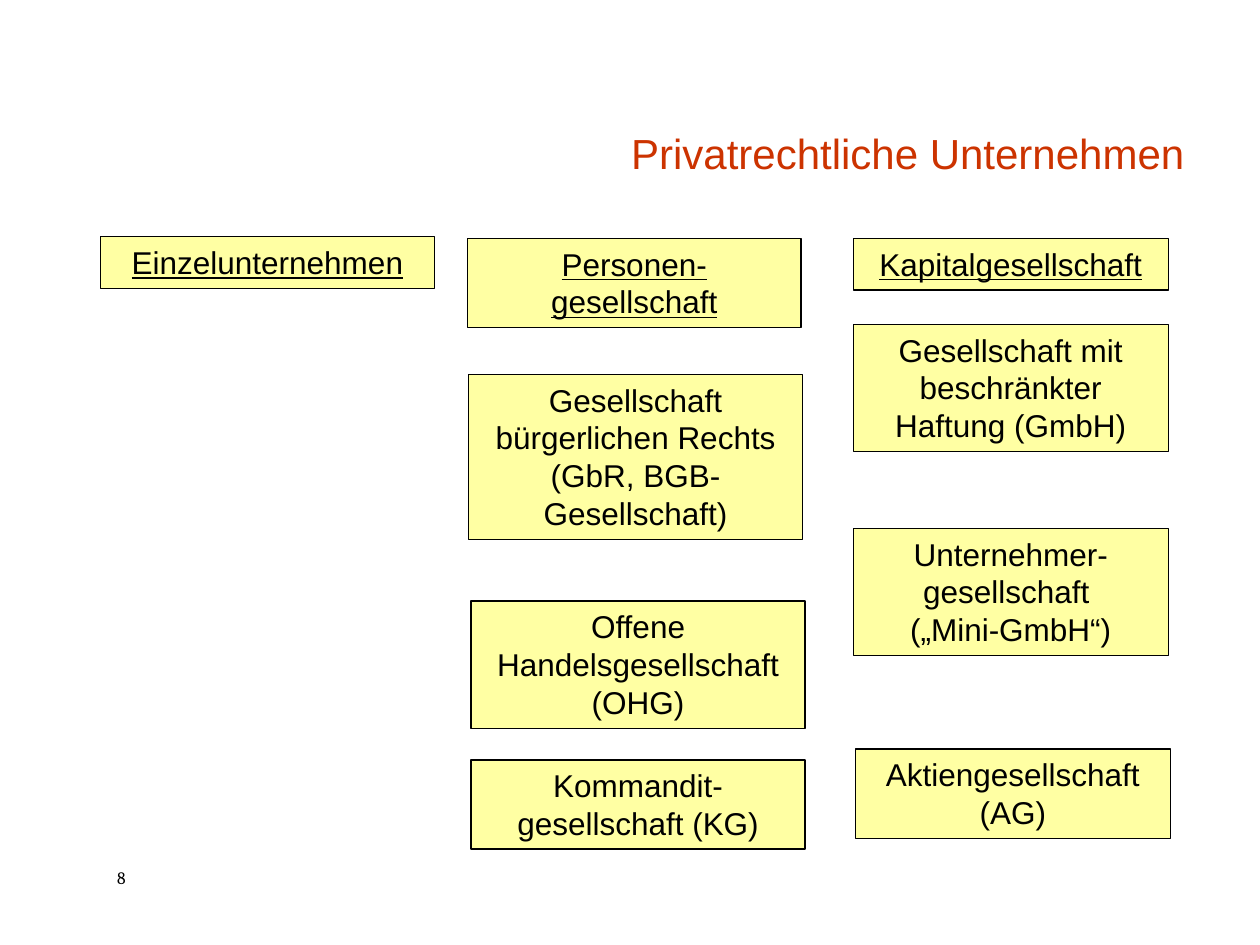
"""Build the slide on the forms of enterprise under private law."""
from pptx import Presentation
from pptx.dml.color import RGBColor
from pptx.enum.shapes import MSO_SHAPE as Shape
from pptx.enum.text import MSO_ANCHOR as Anchor, MSO_AUTO_SIZE as AutoSize, PP_ALIGN as Align
from pptx.util import Pt


def color(value):
    return RGBColor.from_string(value)


def write(frame, text, align, hex_color, frame_format, font_format):
    for name, value in frame_format.items():
        setattr(frame, name, value)
    para = frame.paragraphs[0]
    para.text = text
    para.alignment = align
    for span in para.runs:
        for name, value in font_format.items():
            setattr(span.font, name, value)
        span.font.color.rgb = color(hex_color)
    return para


deck = Presentation()
deck.slide_width, deck.slide_height = Pt(720), Pt(540)
slide = deck.slides.add_slide(deck.slide_layouts[5])

title = slide.shapes.title
title.left, title.top, title.width, title.height = Pt(150.5), Pt(30), Pt(533.5), Pt(75.6)
title_format = {"vertical_anchor": Anchor.BOTTOM, "auto_size": AutoSize.NONE, "word_wrap": True}
title_para = write(title.text_frame, "Privatrechtliche Unternehmen", Align.RIGHT, "CC3300",
                   title_format, {"name": "Arial", "size": Pt(24)})
title_para.line_spacing = 0.9

box_format = {"vertical_anchor": Anchor.TOP, "auto_size": AutoSize.SHAPE_TO_FIT_TEXT, "word_wrap": True}
heights = {1: 29.5, 2: 51, 3: 72.8, 4: 94.4}
columns = [
    (190.8, [("Einzelunternehmen", 57.4, 135.2, 1)]),
    (190.8, [
        ("Personen-gesellschaft", 267, 136.2, 2),
        ("Gesellschaft bürgerlichen Rechts (GbR, BGB-Gesellschaft)", 267.8, 214, 4),
        ("Offene Handelsgesellschaft (OHG)", 269.2, 343.4, 3),
        ("Kommandit-gesellschaft (KG)", 269.2, 434.2, 2),
    ]),
    (180, [
        ("Kapitalgesellschaft", 487.6, 136.2, 1),
        ("Gesellschaft mit beschränkter Haftung (GmbH)", 487.6, 185.4, 3),
        ("Unternehmer-gesellschaft \n(„Mini-GmbH“)", 487.6, 302, 3),
        ("Aktiengesellschaft (AG)", 488.8, 428, 2),
    ]),
]
for width, entries in columns:
    for index, (text, left, top, lines) in enumerate(entries):
        box = slide.shapes.add_shape(Shape.RECTANGLE, Pt(left), Pt(top), Pt(width), Pt(heights[lines]))
        box.shadow.inherit = False
        box.fill.solid()
        box.fill.fore_color.rgb = color("FFFFA3")
        box.line.color.rgb = color("000000")
        box.line.width = Pt(0.75)
        write(box.text_frame, text, Align.CENTER, "000000", box_format,
              {"name": "Arial", "size": Pt(18), "underline": index == 0})

page_number = slide.shapes.add_textbox(Pt(59.8), Pt(491.8), Pt(48), Pt(19.4))
write(page_number.text_frame, "8", Align.LEFT, "000000", box_format,
      {"name": "Cambria", "size": Pt(10)})

deck.save("out.pptx")
